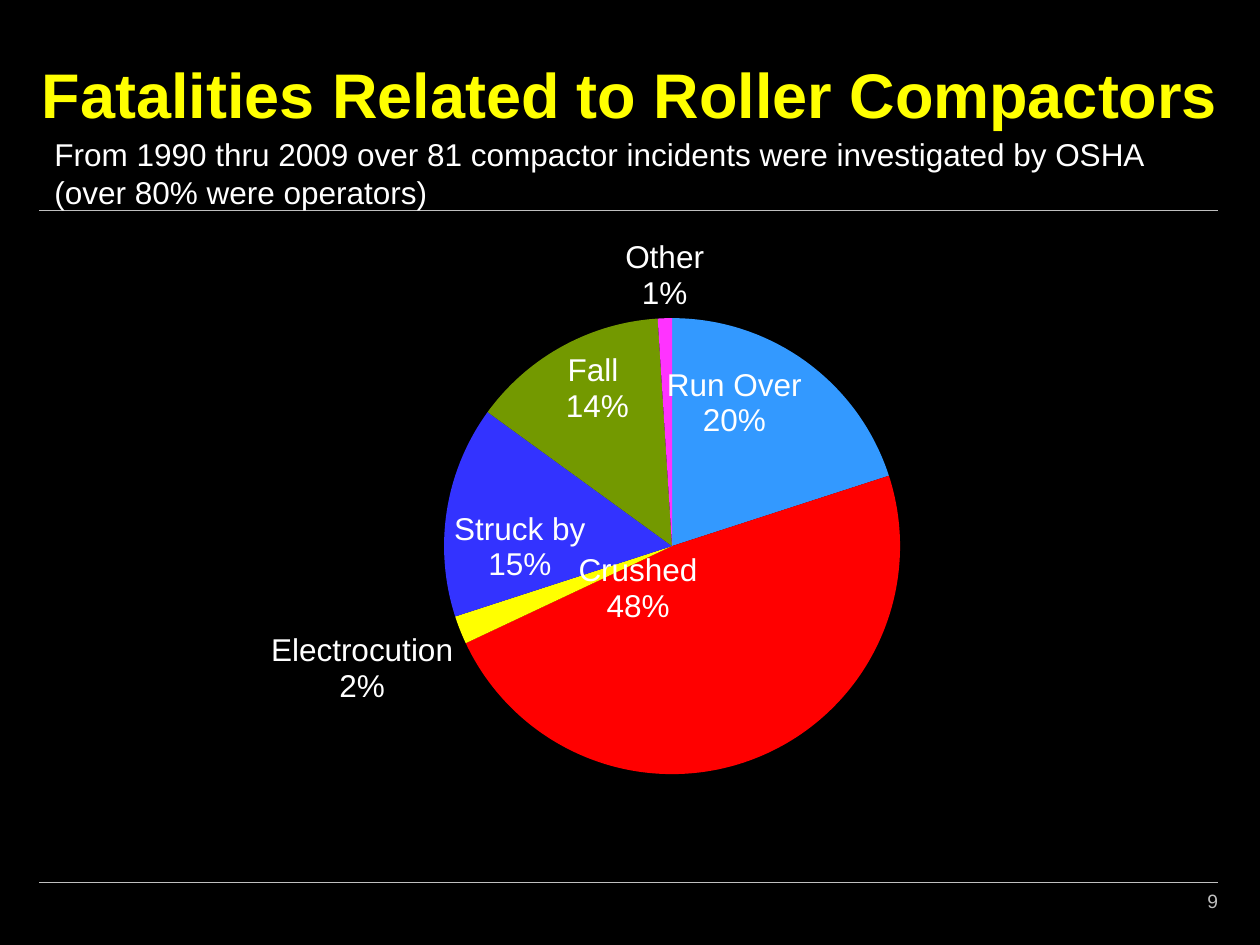
from dataclasses import dataclass
from typing import Any, Optional

from lxml.etree import SubElement
from pptx import Presentation
from pptx.chart.data import CategoryChartData
from pptx.dml.color import RGBColor
from pptx.enum.chart import XL_CHART_TYPE, XL_LABEL_POSITION
from pptx.enum.shapes import MSO_CONNECTOR
from pptx.enum.text import MSO_ANCHOR, MSO_AUTO_SIZE, PP_ALIGN
from pptx.oxml import parse_xml
from pptx.oxml.ns import nsdecls, qn
from pptx.util import Pt

INSIDE = XL_LABEL_POSITION.INSIDE_END
OUTSIDE = XL_LABEL_POSITION.OUTSIDE_END
CENTER = XL_LABEL_POSITION.CENTER


@dataclass(frozen=True)
class Slice:
    cause: str
    percent: int
    color: str
    label_position: Any
    label_shift: Optional[tuple[float, float]] = None


@dataclass(frozen=True)
class TextBlock:
    wording: str
    box: tuple[float, float, float, float]
    size: float
    color: str
    frame_format: dict
    align: Any = PP_ALIGN.LEFT
    bold: bool = False


@dataclass(frozen=True)
class Rule:
    left: float
    right: float
    y: float


SLICES = [
    Slice("Run Over", 20, "3399FF", INSIDE),
    Slice("Crushed", 48, "FF0000", CENTER, (-0.07, -0.1)),
    Slice("Electrocution", 2, "FFFF00", OUTSIDE),
    Slice("Struck by", 15, "3333FF", INSIDE),
    Slice("Fall ", 14, "739900", INSIDE),
    Slice("Other", 1, "FF33FF", OUTSIDE),
]
RULES = [Rule(22.5, 696, 120), Rule(22.5, 696, 504)]
HEADLINE = TextBlock(
    "Fatalities Related to Roller Compactors", (12, 8.5, 696, 70), 36, "FFFF00",
    {"vertical_anchor": MSO_ANCHOR.BOTTOM, "auto_size": MSO_AUTO_SIZE.NONE},
    PP_ALIGN.CENTER, True,
)
SUMMARY = TextBlock(
    "From 1990 thru 2009 over 81 compactor incidents were investigated by OSHA "
    "(over 80% were operators)",
    (24, 73.5, 672, 51), 18, "FFFFFF",
    {"auto_size": MSO_AUTO_SIZE.SHAPE_TO_FIT_TEXT},
)
PAGE_NUMBER = TextBlock(
    "9", (636, 500.5, 60, 28.5), 11, "BFBFBF",
    {"vertical_anchor": MSO_ANCHOR.MIDDLE, "margin_left": 0, "margin_right": 0},
    PP_ALIGN.RIGHT,
)
CHART_BOX = (49, 126, 620.5, 365)
PIE_AREA = {"x": 0.33, "y": 0.15, "w": 0.42, "h": 0.72}


def rgb(hex_color: str) -> RGBColor:
    return RGBColor.from_string(hex_color)


def apply(target: Any, formats: dict) -> None:
    for name, value in formats.items():
        setattr(target, name, value)


def format_font(font: Any, size: float, color: str, bold: bool = False) -> None:
    apply(font, {"name": "Arial", "size": Pt(size), "bold": bold})
    font.color.rgb = rgb(color)


def fill_text(holder: Any, block: TextBlock) -> None:
    edges = ("left", "top", "width", "height")
    apply(holder, {edge: Pt(value) for edge, value in zip(edges, block.box)})
    frame = holder.text_frame
    apply(frame, {"text": block.wording, "word_wrap": True, **block.frame_format})
    paragraph = frame.paragraphs[0]
    paragraph.alignment = block.align
    format_font(paragraph.runs[0].font, block.size, block.color, block.bold)


def add_text(slide: Any, block: TextBlock) -> None:
    fill_text(slide.shapes.add_textbox(*map(Pt, block.box)), block)


def add_rule(slide: Any, rule: Rule) -> None:
    line = slide.shapes.add_connector(
        MSO_CONNECTOR.STRAIGHT, Pt(rule.left), Pt(rule.y), Pt(rule.right), Pt(rule.y)
    )
    line.line.width = Pt(0.25)
    line.line.color.rgb = rgb("BFBFBF")
    SubElement(line._element.spPr, qn("a:effectLst"))


def manual_layout(values: dict, modes: str = "") -> Any:
    places = "".join(f'<c:{key} val="{value}"/>' for key, value in values.items())
    return parse_xml(
        f'<c:layout {nsdecls("c")}><c:manualLayout>{modes}{places}'
        "</c:manualLayout></c:layout>"
    )


def format_slice(point: Any, part: Slice) -> None:
    point.format.fill.solid()
    point.format.fill.fore_color.rgb = rgb(part.color)
    point.format.line.fill.background()
    label = point.data_label
    format_font(label.font, 18, "FFFFFF")
    label.position = part.label_position
    label_xml = point._element.xpath(f"c:dLbls/c:dLbl[c:idx/@val='{SLICES.index(part)}']")[0]
    shown = {"showVal": "0", "showCatName": "1", "showPercent": "1"}
    for tag, value in shown.items():
        label_xml.find(qn(f"c:{tag}")).set("val", value)
    SubElement(label_xml, qn("c:separator")).text = "\n"
    if part.label_shift:
        x, y = part.label_shift
        label_xml.insert(1, manual_layout({"x": x, "y": y}))


def add_pie(slide: Any) -> None:
    data = CategoryChartData()
    data.categories = [part.cause for part in SLICES]
    data.add_series("Series 1", [part.percent for part in SLICES])
    chart = slide.shapes.add_chart(XL_CHART_TYPE.PIE, *map(Pt, CHART_BOX), data).chart
    apply(chart, {"has_legend": False, "has_title": False})
    format_font(chart.font, 18, "FFFFFF")
    plot = chart.plots[0]
    plot.vary_by_categories = True
    for index, part in enumerate(SLICES):
        format_slice(plot.series[0].points[index], part)
    plot_area = chart._chartSpace.chart.plotArea
    for layout in plot_area.findall(qn("c:layout")):
        plot_area.remove(layout)
    modes = (
        '<c:layoutTarget val="inner"/><c:xMode val="edge"/><c:yMode val="edge"/>'
    )
    plot_area.insert(0, manual_layout(PIE_AREA, modes))


def main() -> None:
    deck = Presentation()
    apply(deck, {"slide_width": Pt(720), "slide_height": Pt(540)})
    slide = deck.slides.add_slide(deck.slide_layouts[5])
    slide.background.fill.solid()
    slide.background.fill.fore_color.rgb = rgb("000000")
    for rule in RULES:
        add_rule(slide, rule)
    fill_text(slide.shapes.title, HEADLINE)
    add_pie(slide)
    for block in (PAGE_NUMBER, SUMMARY):
        add_text(slide, block)
    deck.save("out.pptx")


if __name__ == "__main__":
    main()
